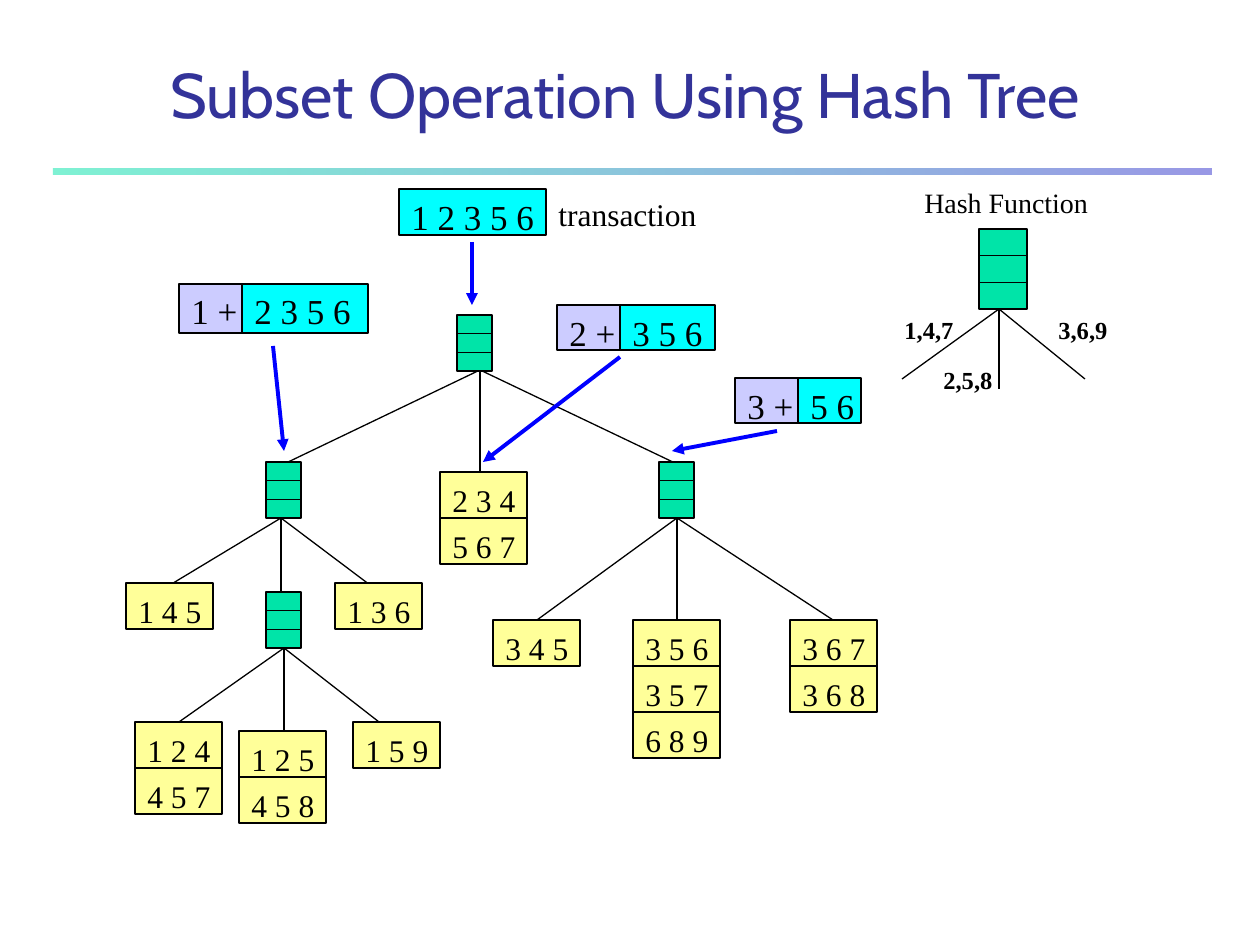
from pptx import Presentation
from pptx import util as u
from pptx.dml.color import RGBColor
from pptx.enum import shapes, text
from pptx.oxml.ns import qn
from lxml import etree

PX = 914400 / 126  # EMU per px

BLACK = RGBColor(0x00, 0x00, 0x00)
NAVY = RGBColor(0x33, 0x33, 0x99)
BLUE = RGBColor(0x00, 0x00, 0xFF)
INDIGO = RGBColor(0x33, 0x33, 0xCC)
GREEN = RGBColor(0x00, 0xE4, 0xA8)
YELLOW = RGBColor(0xFF, 0xFF, 0x99)
CYAN = RGBColor(0x00, 0xFF, 0xFF)
LILAC = RGBColor(0xCC, 0xCC, 0xFF)

SERIF = "Times New Roman"
LEAF_W, LEAF_H = 87, 46
NODE_W, NODE_H = 35, 56


def px(*values):
    return [u.Emu(round(v * PX)) for v in values]


def style_text(tf, content, size, color=BLACK, font=SERIF, bold=False):
    tf.text = content
    f = tf.paragraphs[0].runs[0].font
    f.size, f.name, f.bold = u.Pt(size), font, bold
    f.color.rgb = color


def add_label(slide, box, content, size, bold=False):
    tf = slide.shapes.add_textbox(*px(*box)).text_frame
    tf.word_wrap = False
    style_text(tf, content, size, bold=bold)


def add_box(slide, box, fill, content=None, size=18, inset=6):
    s = slide.shapes.add_shape(shapes.MSO_SHAPE.RECTANGLE, *px(*box))
    s.shadow.inherit = False
    s.fill.solid()
    s.fill.fore_color.rgb = fill
    s.line.color.rgb = BLACK
    s.line.width = u.Pt(0.75)
    if content:
        tf = s.text_frame
        tf.word_wrap = True
        tf.vertical_anchor = text.MSO_ANCHOR.TOP
        tf.margin_top, = px(inset)
        tf.margin_right = tf.margin_bottom = 0
        style_text(tf, content, size)
        tf.paragraphs[0].alignment = text.PP_ALIGN.LEFT


def add_line(slide, start, end, color=BLACK, width=0.75, arrow=False):
    c = slide.shapes.add_connector(shapes.MSO_CONNECTOR.STRAIGHT, *px(*start, *end))
    c.line.color.rgb = color
    c.line.width = u.Pt(width)
    if arrow:
        etree.SubElement(c.line._get_or_add_ln(), qn("a:tailEnd"), type="triangle")
    etree.SubElement(c._element.spPr, qn("a:effectLst"))


def add_node(slide, x, y, w=NODE_W, h=NODE_H):
    """Hash node: a box cut into three equal rows."""
    add_box(slide, (x, y, w, h), GREEN)
    for i in (1, 2):
        row_y = y + h * i / 3
        add_line(slide, (x, row_y), (x + w, row_y))


def add_header(slide, x, y):
    # Title
    s = slide.shapes.add_textbox(*px(x, y, 1144, 84))
    tf = s.text_frame
    tf.word_wrap = True
    tf.vertical_anchor = text.MSO_ANCHOR.BOTTOM
    style_text(tf, "Subset Operation Using Hash Tree", 36, NAVY, "Cabin")
    tf.paragraphs[0].alignment = text.PP_ALIGN.CENTER
    # Half-transparent gradient rule
    s = slide.shapes.add_shape(shapes.MSO_SHAPE.RECTANGLE, *px(x, y + 115, 1159, 7))
    s.shadow.inherit = False
    s.line.fill.background()
    s.fill.gradient()
    s.fill.gradient_angle = 0
    for stop, position, color in zip(s.fill.gradient_stops, (0, 1), (GREEN, INDIGO)):
        stop.position = position
        stop.color.rgb = color
    for clr in s._element.spPr.iter(qn("a:srgbClr")):
        etree.SubElement(clr, qn("a:alpha"), val="50000")


def add_tree(slide, x, y):
    # Branches: parent point, then child points
    branches = [
        ((354, 55), [(158, 149), (354, 157), (551, 149)]),
        ((155, 203), [(44, 270), (155, 277), (244, 270)]),
        ((551, 203), [(411, 305), (551, 305), (707, 305)]),
        ((158, 333), [(53, 407), (158, 416), (253, 407)]),
    ]
    for (px0, py0), children in branches:
        for cx, cy in children:
            add_line(slide, (x + px0, y + py0), (x + cx, y + cy))
    # Inner nodes
    for nx, ny in [(331, 0), (140, 147), (533, 147), (140, 277)]:
        add_node(slide, x + nx, y + ny)
    # Leaves, each a stack of itemsets
    leaves = [
        (0, 268, ["1 4 5"]),
        (209, 268, ["1 3 6"]),
        (314, 157, ["2 3 4", "5 6 7"]),
        (367, 305, ["3 4 5"]),
        (507, 305, ["3 5 6", "3 5 7", "6 8 9"]),
        (664, 305, ["3 6 7", "3 6 8"]),
        (9, 407, ["1 2 4", "4 5 7"]),
        (113, 416, ["1 2 5", "4 5 8"]),
        (227, 407, ["1 5 9"]),
    ]
    for lx, ly, itemsets in leaves:
        for i, items in enumerate(itemsets):
            box = (x + lx, y + ly + i * LEAF_H, LEAF_W, LEAF_H)
            add_box(slide, box, YELLOW, items, inset=9)


def add_subset(slide, x, y, prefix, rest, rest_w, h):
    """Fixed prefix item beside the remaining items."""
    prefix_w = 63
    add_box(slide, (x, y, prefix_w, h), LILAC, prefix, 20)
    add_box(slide, (x + prefix_w, y, rest_w, h), CYAN, rest, 20)


def add_transaction(slide, x, y):
    add_box(slide, (x, y, 147, 46), CYAN, "1 2 3 5 6", 20)
    add_label(slide, (x + 147, y, 164, 50), "transaction", 18)


def add_hash_function(slide, x, y):
    add_label(slide, (x + 20, y, 190, 47), "Hash Function", 16)
    add_node(slide, x + 87, y + 50, 48, 80)
    for ex, ey in [(10, 200), (107, 210), (193, 200)]:
        add_line(slide, (x + 107, y + 130), (x + ex, y + ey))
    for lx, ly, items in [(0, 130, "1,4,7"), (39, 180, "2,5,8"), (154, 130, "3,6,9")]:
        add_label(slide, (x + lx, y + ly, 74, 42), items, 14, bold=True)


def main():
    prs = Presentation()
    prs.slide_width, prs.slide_height = px(1260, 945)
    slide = prs.slides.add_slide(prs.slide_layouts[6])

    add_header(slide, 53, 53)
    add_tree(slide, 126, 315)
    add_transaction(slide, 399, 189)

    # Arrows from each item list to the node it visits
    for start, end in [((472, 242), (472, 305)), ((273, 346), (284, 451)),
                       ((620, 357), (483, 462)), ((777, 431), (672, 451))]:
        add_line(slide, start, end, BLUE, 2.25, arrow=True)

    add_subset(slide, 179, 284, "1 +", "2 3 5 6", 126, 49)
    add_subset(slide, 557, 305, "2 +", "3 5 6", 95, 45)
    add_subset(slide, 735, 378, "3 +", "5 6", 63, 45)
    add_hash_function(slide, 892, 179)

    prs.save("out.pptx")


if __name__ == "__main__":
    main()
